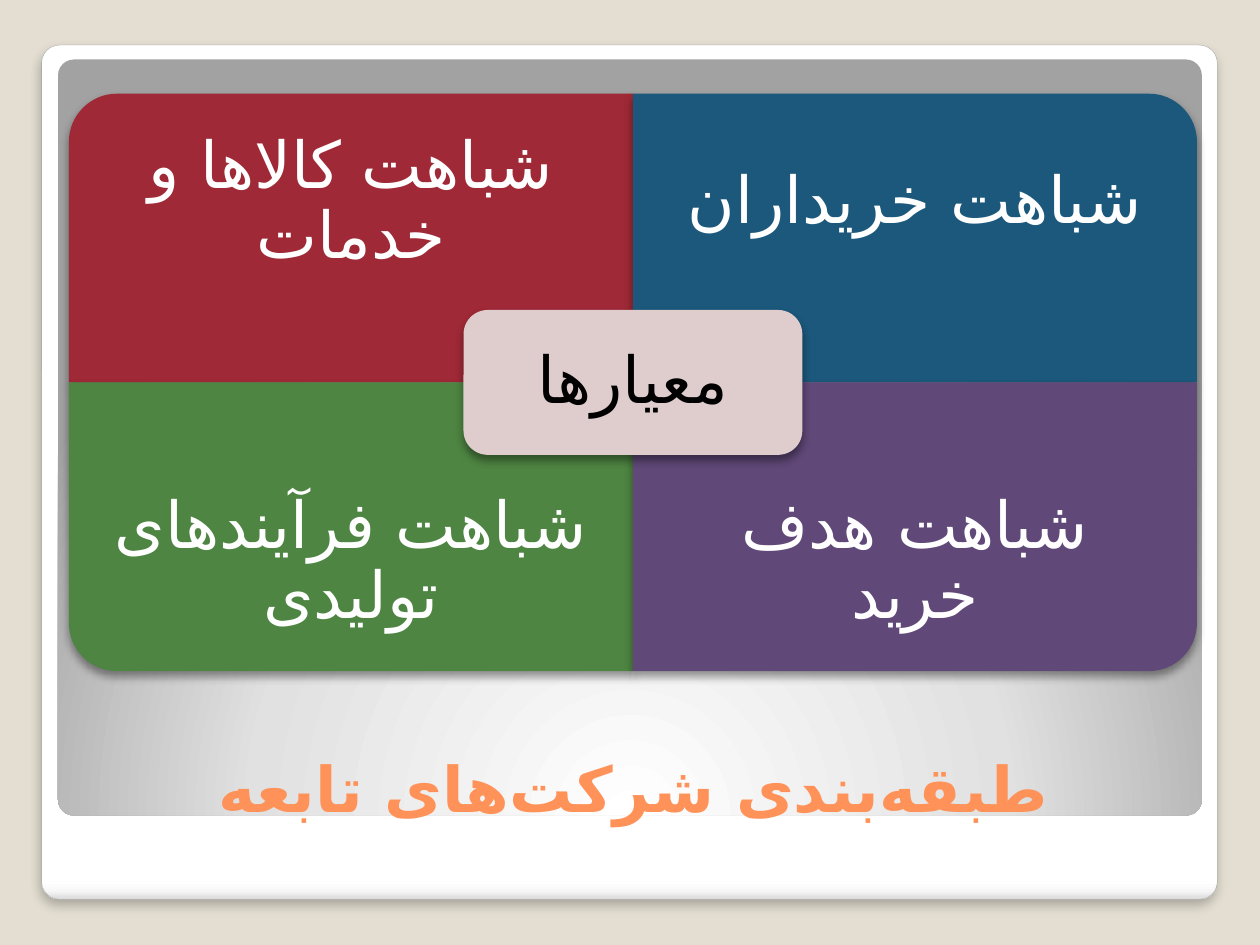
from math import cos, pi, sin

from pptx import Presentation
from pptx.dml.color import RGBColor
from pptx.enum.shapes import MSO_SHAPE as Preset
from pptx.enum.text import MSO_ANCHOR as Anchor, MSO_AUTO_SIZE as AutoSize, PP_ALIGN as Align
from pptx.oxml import parse_xml
from pptx.oxml.ns import nsdecls, qn
from pptx.util import Cm, Pt

FONT = "DejaVu Sans"
NON_JOINER = chr(0x200C)  # keeps Persian word parts unjoined
SAND = RGBColor(0xE3, 0xDE, 0xD1)
EDGE = RGBColor(0xA4, 0xA4, 0xA4)
ORANGE = RGBColor(0xFF, 0x92, 0x58)
WHITE = RGBColor(0xFF, 0xFF, 0xFF)
BLACK = RGBColor(0x00, 0x00, 0x00)
RED = RGBColor(0x9F, 0x29, 0x36)
BLUE = RGBColor(0x1B, 0x58, 0x7C)
GREEN = RGBColor(0x4E, 0x85, 0x42)
PURPLE = RGBColor(0x60, 0x48, 0x78)
PINK = RGBColor(0xDF, 0xCD, 0xCE)


def write_text(box, text, size=37, color=WHITE, bold=False, anchor=Anchor.MIDDLE,
               margins=(0.25, 0.13, 0.25, 0.13), spacing=0.9):
    """Write one centred right-to-left paragraph; margins are left, top, right, bottom in cm."""
    frame = box.text_frame
    frame.word_wrap = True
    frame.auto_size = AutoSize.NONE
    frame.vertical_anchor = anchor
    frame.margin_left, frame.margin_top, frame.margin_right, frame.margin_bottom = map(Cm, margins)
    para = frame.paragraphs[0]
    para.alignment = Align.CENTER
    para.line_spacing = spacing
    para._p.get_or_add_pPr().set("rtl", "1")
    span = para.add_run()
    span.text = text
    span.font.size = Pt(size)
    span.font.bold = bold
    span.font.name = FONT
    span.font.color.rgb = color
    span.font._element.append(parse_xml(f'<a:cs {nsdecls("a")} typeface="{FONT}"/>'))


def add_shadow(shape, blur=5.2, distance=3, opacity=40):
    shape.shadow.inherit = False
    shape.element.spPr.find(qn("a:effectLst")).append(parse_xml(
        f'<a:outerShdw {nsdecls("a")} blurRad="{Pt(blur)}" dist="{Pt(distance)}" dir="5400000" '
        f'algn="t" rotWithShape="0"><a:srgbClr val="000000"><a:alpha val="{opacity * 1000}"/>'
        '</a:srgbClr></a:outerShdw>'))


deck = Presentation()
deck.slide_width, deck.slide_height = Cm(25.4), Cm(19.05)
page = deck.slides.add_slide(deck.slide_layouts[5])
page.background.fill.solid()
page.background.fill.fore_color.rgb = SAND

# White card and the grey panel on it
panels = [
    ((0.84, 0.91, 23.7, 17.22),
     [(0, "FFFFFF"), (98, "FFFFFF"), (99, "F7F7F7"), (100, "DADADA")],
     '<a:lin ang="5400000" scaled="0"/>'),
    ((1.17, 1.2, 23.06, 15.24),
     [(0, "FFFFFF"), (55, "E1E1E1"), (100, "A2A2A2")],
     '<a:path path="circle"><a:fillToRect l="50000" t="175000" r="50000" b="-75000"/></a:path>'),
]
backdrop = []
for place, stops, direction in panels:
    panel = page.shapes.add_shape(Preset.ROUNDED_RECTANGLE, *map(Cm, place))
    panel.adjustments[0] = 0.021
    stop_list = "".join(f'<a:gs pos="{position * 1000}"><a:srgbClr val="{color}"/></a:gs>'
                        for position, color in stops)
    panel.element.spPr.append(parse_xml(
        f'<a:gradFill {nsdecls("a")} rotWithShape="1"><a:gsLst>{stop_list}</a:gsLst>'
        f'{direction}</a:gradFill>'))
    backdrop.append(panel)
card, inner_panel = backdrop
card.line.color.rgb = EDGE
card.line.width = Pt(0.16)
add_shadow(card, blur=6, distance=4, opacity=25)
inner_panel.line.fill.background()
inner_panel.shadow.inherit = False

# Title, brought in front of the panels
title = page.shapes.title
title.left, title.top, title.width, title.height = Cm(1.4), Cm(13.84), Cm(22.73), Cm(2.92)
title.element.getparent().append(title.element)
write_text(title, NON_JOINER.join(["طبقه", "بندی شرکت", "های تابعه"]), size=36,
           color=ORANGE, bold=True, anchor=Anchor.BOTTOM, spacing=1.0)

# Four quadrants around a centre, each with its outer corner rounded
CENTER_X, CENTER_Y = 12.76, 7.71
WIDTH, HEIGHT, RADIUS = 11.37, 5.82, 0.97
ARC_STEPS = 16
quadrants = [
    (-1, -1, RED, "شباهت کالاها و خدمات"),
    (1, -1, BLUE, "شباهت خریداران"),
    (-1, 1, GREEN, "شباهت فرآیندهای تولیدی"),
    (1, 1, PURPLE, "شباهت هدف خرید"),
]
for side_x, side_y, color, text in quadrants:
    outline = [(WIDTH, 0)]
    for step in range(ARC_STEPS + 1):
        angle = pi / 2 * step / ARC_STEPS
        outline.append((WIDTH - RADIUS + RADIUS * cos(angle),
                        HEIGHT - RADIUS + RADIUS * sin(angle)))
    outline.append((0, HEIGHT))
    builder = page.shapes.build_freeform(Cm(CENTER_X), Cm(CENTER_Y))
    builder.add_line_segments([(Cm(CENTER_X + side_x * x), Cm(CENTER_Y + side_y * y))
                               for x, y in outline])
    quadrant = builder.convert_to_shape()
    quadrant.fill.solid()
    quadrant.fill.fore_color.rgb = color
    quadrant.line.fill.background()
    add_shadow(quadrant)
    margins = (0.74, 0.74, 0.74, 2.18) if side_y < 0 else (0.74, 2.18, 0.74, 0.74)
    write_text(quadrant, text, margins=margins)

# Label at the centre
HUB_WIDTH, HUB_HEIGHT = 6.83, 2.92
hub = page.shapes.add_shape(Preset.ROUNDED_RECTANGLE, Cm(CENTER_X - HUB_WIDTH / 2),
                            Cm(CENTER_Y - HUB_HEIGHT / 2), Cm(HUB_WIDTH), Cm(HUB_HEIGHT))
hub.fill.solid()
hub.fill.fore_color.rgb = PINK
hub.line.fill.background()
add_shadow(hub)
write_text(hub, "معیارها", color=BLACK, margins=(0.53, 0.53, 0.53, 0.53))

deck.save("out.pptx")
